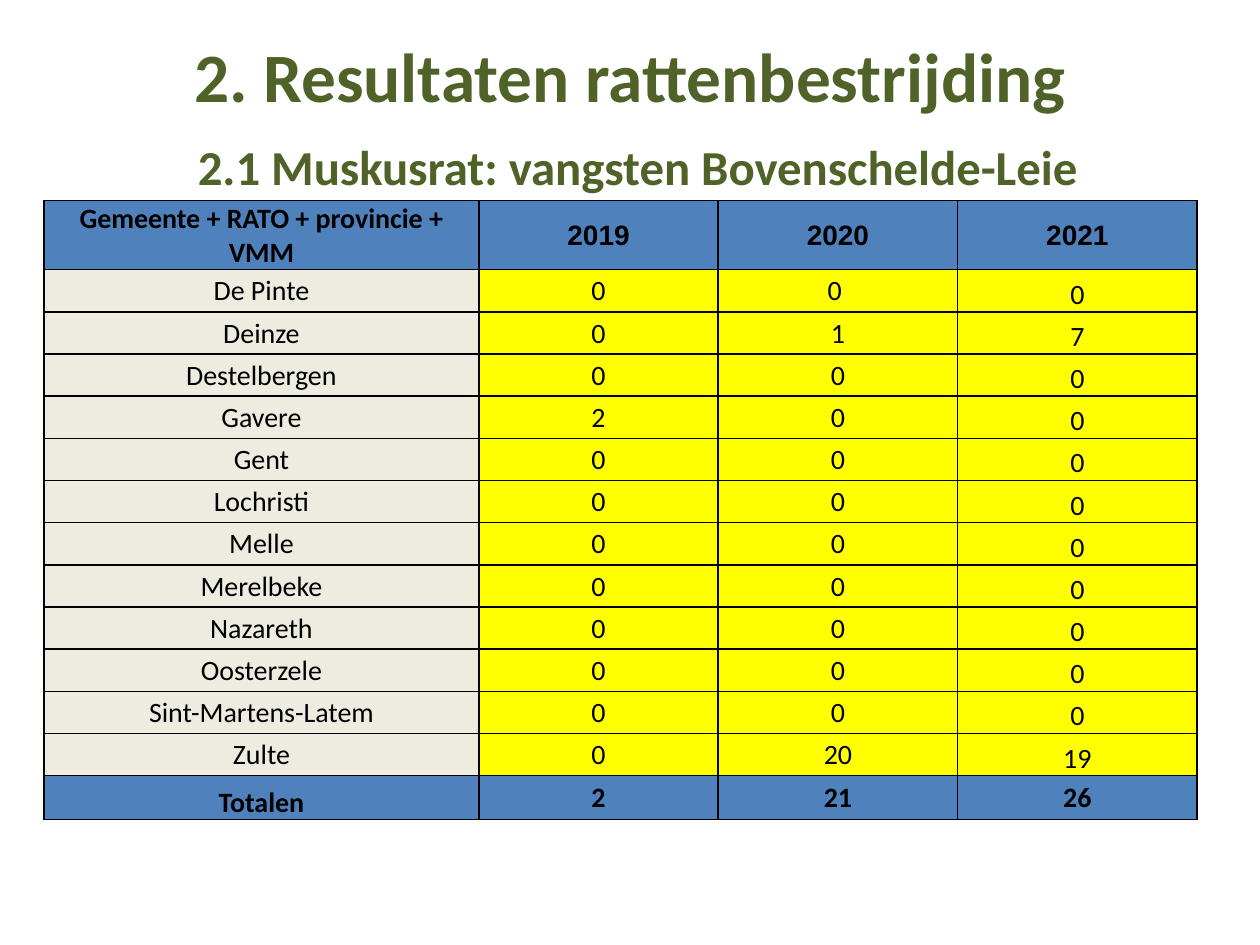
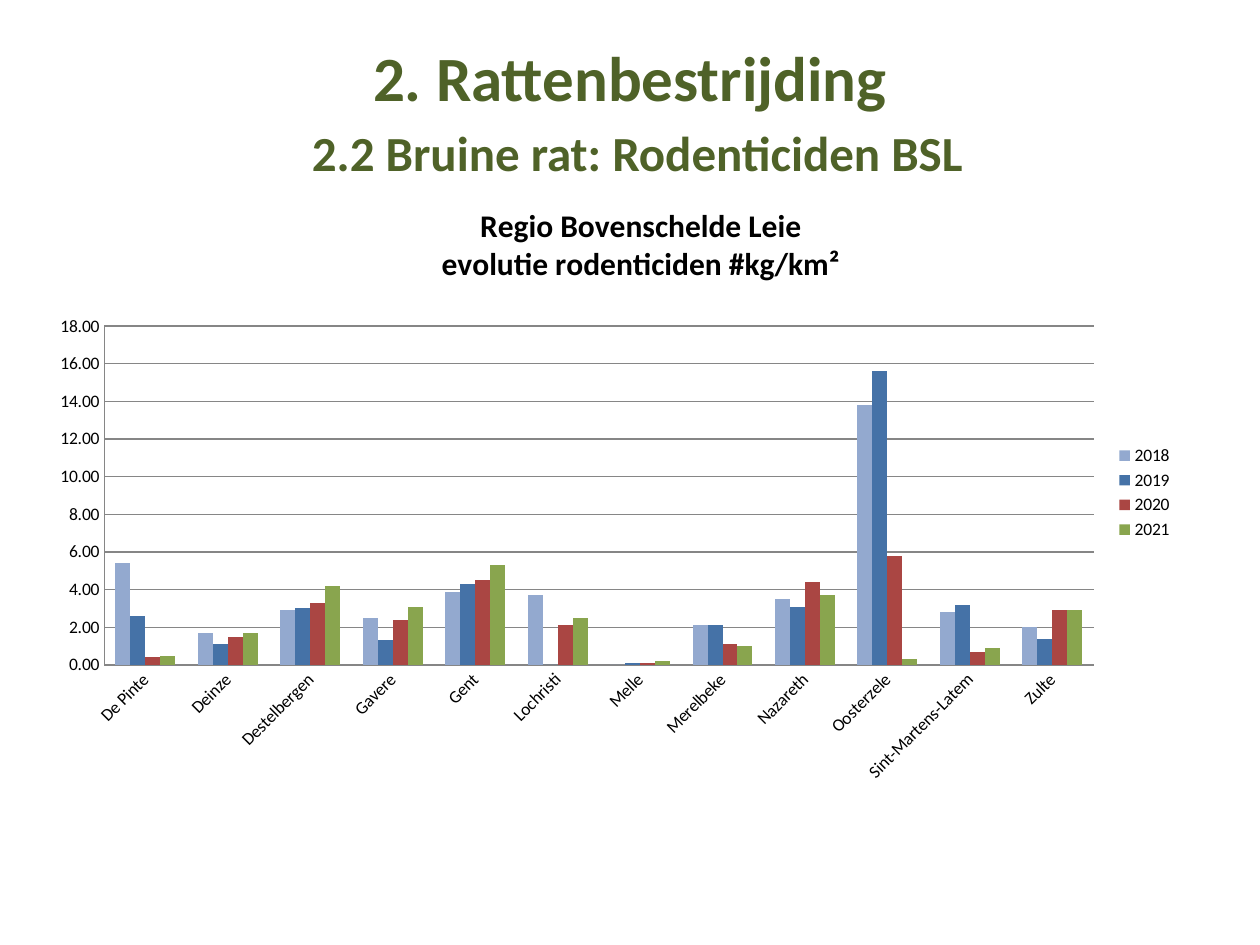
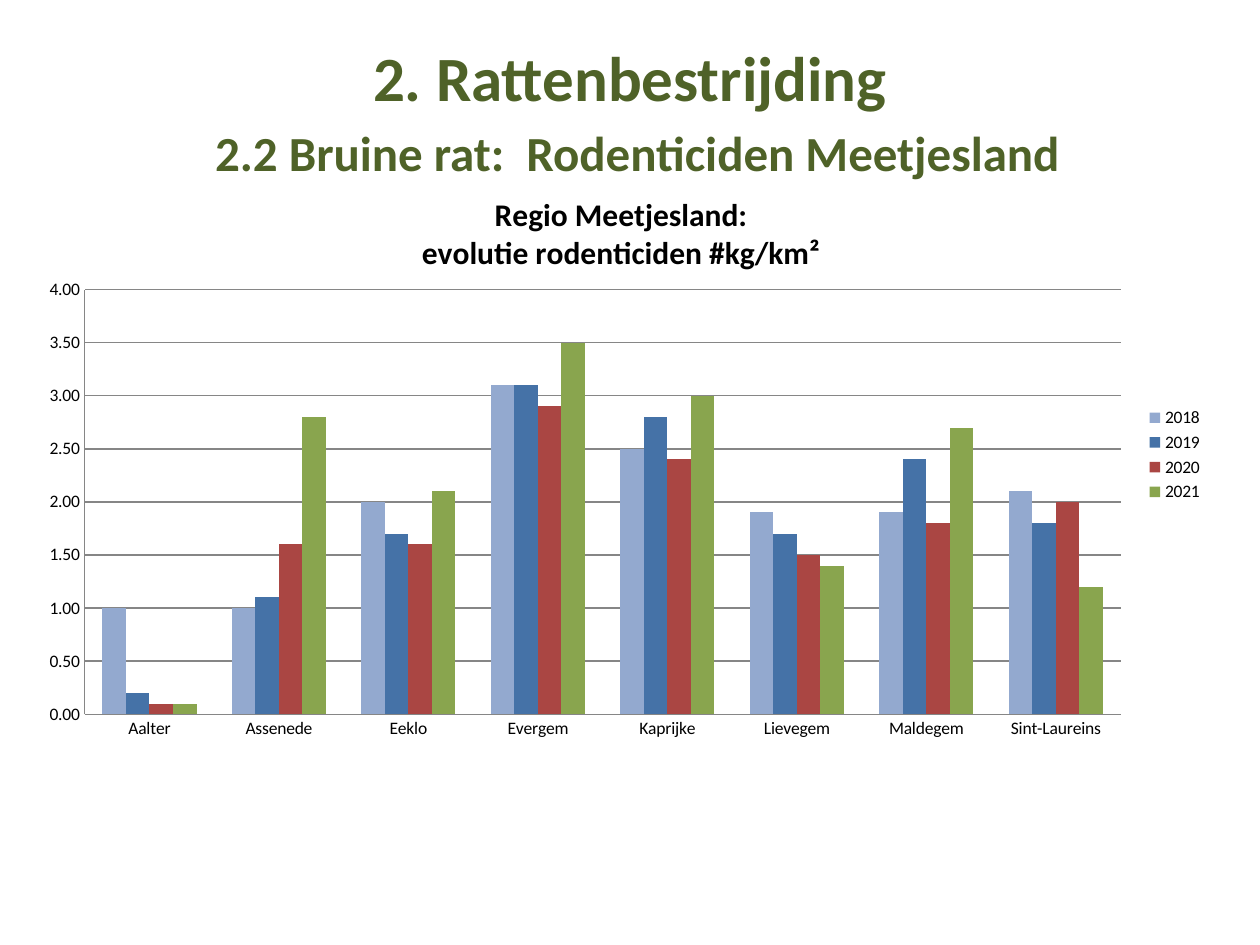
"""Build three slides on rat control: a table of catches and two column charts."""
from dataclasses import dataclass

from lxml import etree
from pptx import Presentation
from pptx import util as u
from pptx.chart.data import CategoryChartData
from pptx.dml.color import RGBColor
from pptx.enum import chart as charts
from pptx.enum import text
from pptx.oxml import parse_xml
from pptx.oxml.ns import nsdecls, qn

EMU_PER_PX = 4572


@dataclass(frozen=True)
class Theme:
    """Colours, fonts and type sizes shared by the slides."""
    font: str = "Calibri"
    year_font: str = "Arial"
    heading: str = "4F6228"
    ink: str = "000000"
    band: str = "4F81BD"
    place: str = "EEECE1"
    count: str = "FFFF00"
    grid: str = "868686"
    series: tuple[str, ...] = ("93A9CF", "4572A7", "AA4643", "89A54E")
    cell_size: float = 16
    chart_size: float = 10
    chart_title_size: float = 18


@dataclass(frozen=True)
class Box:
    """A rectangle in px."""
    left: int
    top: int
    width: int
    height: int

    def emu(self) -> tuple[u.Emu, ...]:
        """Return the rectangle in EMU."""
        return tuple(map(px, (self.left, self.top, self.width, self.height)))


@dataclass(frozen=True)
class Heading:
    """A title with a subtitle on the next line."""
    title: str
    subtitle: str
    title_size: float = 36
    gap_size: float = 37
    subtitle_size: float = 28
    line_spacing: float = 0.9


@dataclass(frozen=True)
class RegionChart:
    """Rodenticide use per municipality in one region."""
    box: Box
    title: str
    title_at: tuple[float, float]
    plot_at: tuple[float, float, float, float]
    maximum: float
    step: float
    label_angle: int
    values: dict[str, tuple[float, ...]]


THEME = Theme()
HEADING_BOX = Box(100, 60, 1800, 250)
TABLE_BOX = Box(70, 318, 1830, 984)
COLUMN_WIDTHS = (690, 380, 380, 380)
HEADER_HEIGHT, ROW_HEIGHT, TOTAL_HEIGHT = 110, 67, 70
CELL_INSET = 2
CHART_YEARS = ("2018", "2019", "2020", "2021")

CATCHES = (
    ("Gemeente + RATO + provincie + VMM", "2019", "2020", "2021"),
    ("De Pinte", "0", "0 ", "0"),
    ("Deinze", "0", "1", "7"),
    ("Destelbergen", "0", "0", "0"),
    ("Gavere", "2", "0", "0"),
    ("Gent", "0", "0", "0"),
    ("Lochristi", "0", "0", "0"),
    ("Melle", "0", "0", "0"),
    ("Merelbeke", "0", "0", "0"),
    ("Nazareth", "0", "0", "0"),
    ("Oosterzele", "0", "0", "0"),
    ("Sint-Martens-Latem", "0", "0", "0"),
    ("Zulte", "0", "20", "19"),
    ("Totalen", "2", "21", "26"),
)

CATCHES_HEADING = Heading(
    "2. Resultaten rattenbestrijding", "2.1 Muskusrat: vangsten Bovenschelde-Leie",
    39.6, 39.6, 27.9, 1.0)

CHART_SLIDES = (
    (Heading("2. Rattenbestrijding", "2.2 Bruine rat: Rodenticiden BSL"),
     RegionChart(
         Box(56, 310, 1826, 944), "Regio Bovenschelde Leie\nevolutie rodenticiden #kg/km²",
         (0.35, 0.01), (0.06, 0.22, 0.86, 0.57), 18, 2, -45,
         {"De Pinte": (5.4, 2.6, 0.4, 0.5),
          "Deinze": (1.7, 1.1, 1.5, 1.7),
          "Destelbergen": (2.9, 3, 3.3, 4.2),
          "Gavere": (2.5, 1.3, 2.4, 3.1),
          "Gent": (3.9, 4.3, 4.5, 5.3),
          "Lochristi": (3.7, 0, 2.1, 2.5),
          "Melle": (0, 0.1, 0.1, 0.2),
          "Merelbeke": (2.1, 2.1, 1.1, 1),
          "Nazareth": (3.5, 3.1, 4.4, 3.7),
          "Oosterzele": (13.8, 15.6, 5.8, 0.3),
          "Sint-Martens-Latem": (2.8, 3.2, 0.7, 0.9),
          "Zulte": (2, 1.4, 2.9, 2.9)})),
    (Heading("2. Rattenbestrijding", "2.2 Bruine rat:  Rodenticiden Meetjesland"),
     RegionChart(
         Box(40, 254, 1890, 936), "Regio Meetjesland:\nevolutie rodenticiden #kg/km²",
         (0.33, 0.05), (0.05, 0.22, 0.87, 0.72), 4, 0.5, 0,
         {"Aalter": (1, 0.2, 0.1, 0.1),
          "Assenede": (1, 1.1, 1.6, 2.8),
          "Eeklo": (2, 1.7, 1.6, 2.1),
          "Evergem": (3.1, 3.1, 2.9, 3.5),
          "Kaprijke": (2.5, 2.8, 2.4, 3),
          "Lievegem": (1.9, 1.7, 1.5, 1.4),
          "Maldegem": (1.9, 2.4, 1.8, 2.7),
          "Sint-Laureins": (2.1, 1.8, 2, 1.2)})),
)


def px(length: int) -> u.Emu:
    """Turn px into EMU."""
    return u.Emu(length * EMU_PER_PX)


def style_font(font, size: float, color: str, bold: bool = False, name: str = THEME.font) -> None:
    """Set the look of a font."""
    font.name, font.size, font.bold = name, u.Pt(size), bold
    font.color.rgb = RGBColor.from_string(color)


def add_heading(slide, heading: Heading) -> None:
    """Draw the title and subtitle as one centred paragraph."""
    text_frame = slide.shapes.add_textbox(*HEADING_BOX.emu()).text_frame
    text_frame.word_wrap = True
    text_frame.vertical_anchor = text.MSO_ANCHOR.MIDDLE
    paragraph = text_frame.paragraphs[0]
    paragraph.text = heading.title
    paragraph.alignment = text.PP_ALIGN.CENTER
    paragraph.line_spacing = heading.line_spacing
    paragraph.add_line_break()
    for words in (" ", heading.subtitle):
        paragraph.add_run().text = words
    sizes = (heading.title_size, heading.gap_size, heading.subtitle_size)
    for run, size in zip(paragraph.runs, sizes):
        style_font(run.font, size, THEME.heading, bold=True)


def add_borders(cell) -> None:
    """Draw a thin line on each side of a cell."""
    properties = cell._tc.get_or_add_tcPr()
    for index, side in enumerate(("lnL", "lnR", "lnT", "lnB")):
        properties.insert(index, parse_xml(
            f'<a:{side} {nsdecls("a")} w="12700"><a:solidFill>'
            f'<a:srgbClr val="{THEME.ink}"/></a:solidFill></a:{side}>'))


def fill_cell(cell, words: str, row: int, column: int) -> None:
    """Write and style one cell according to its place in the table."""
    last_row, last_column = len(CATCHES) - 1, len(COLUMN_WIDTHS) - 1
    is_band = row in (0, last_row)
    at_bottom = column == (0 if is_band else last_column)
    color = THEME.band if is_band else THEME.count if column else THEME.place
    cell.fill.solid()
    cell.fill.fore_color.rgb = RGBColor.from_string(color)
    cell.vertical_anchor = text.MSO_ANCHOR.BOTTOM if at_bottom else text.MSO_ANCHOR.MIDDLE
    cell.margin_left = cell.margin_right = cell.margin_top = px(CELL_INSET)
    cell.margin_bottom = 0
    cell.text_frame.text = words
    paragraph = cell.text_frame.paragraphs[0]
    paragraph.alignment = text.PP_ALIGN.CENTER
    name = THEME.year_font if row == 0 and column else THEME.font
    style_font(paragraph.runs[0].font, THEME.cell_size, THEME.ink, is_band, name)
    add_borders(cell)


def add_catches_table(slide) -> None:
    """Draw the table of catches per municipality and year."""
    table = slide.shapes.add_table(len(CATCHES), len(COLUMN_WIDTHS), *TABLE_BOX.emu()).table
    heights = (HEADER_HEIGHT, *[ROW_HEIGHT] * (len(CATCHES) - 2), TOTAL_HEIGHT)
    for column, width in zip(table.columns, COLUMN_WIDTHS):
        column.width = px(width)
    for row, height in zip(table.rows, heights):
        row.height = px(height)
    for row_index, values in enumerate(CATCHES):
        for column_index, words in enumerate(values):
            fill_cell(table.cell(row_index, column_index), words, row_index, column_index)


def set_layout(element, index: int, fractions: tuple[float, ...], inner: bool = False) -> None:
    """Place a chart part by fractions of the chart area."""
    for old in element.findall(qn("c:layout")):
        element.remove(old)
    layout = parse_xml(f'<c:layout {nsdecls("c")}><c:manualLayout/></c:layout>')
    settings = [("layoutTarget", "inner")] if inner else []
    settings += [("xMode", "edge"), ("yMode", "edge"), *zip("xywh", fractions)]
    for tag, value in settings:
        etree.SubElement(layout[0], qn(f"c:{tag}")).set("val", str(value))
    element.insert(index, layout)


def add_chart_title(chart, region: RegionChart) -> None:
    """Write the two-line title of a chart."""
    chart.has_title = True
    title = chart.chart_title
    title.text_frame.text = region.title
    for paragraph in title.text_frame.paragraphs:
        style_font(paragraph.runs[0].font, THEME.chart_title_size, THEME.ink, bold=True)
    set_layout(title.element, 1, region.title_at)


def style_axes(chart, region: RegionChart) -> None:
    """Set the scale, labels and lines of both axes."""
    grid_color = RGBColor.from_string(THEME.grid)
    value_axis, category_axis = chart.value_axis, chart.category_axis
    value_axis.minimum_scale, value_axis.maximum_scale = 0, region.maximum
    value_axis.major_unit = region.step
    value_axis.tick_labels.number_format = "0.00"
    value_axis.tick_labels.number_format_is_linked = False
    value_axis.major_gridlines.format.line.color.rgb = grid_color
    for axis in (value_axis, category_axis):
        axis.major_tick_mark = charts.XL_TICK_MARK.NONE
        axis.format.line.color.rgb = grid_color
        style_font(axis.tick_labels.font, THEME.chart_size, THEME.ink)
    body = chart.element.xpath("//c:catAx/c:txPr/a:bodyPr")[0]
    body.set("rot", str(region.label_angle * 60000))


def add_region_chart(slide, region: RegionChart) -> None:
    """Draw the clustered columns of one region."""
    data = CategoryChartData(number_format="0.00")
    data.categories = region.values.keys()
    for year, amounts in zip(CHART_YEARS, zip(*region.values.values())):
        data.add_series(year, amounts)
    chart = slide.shapes.add_chart(
        charts.XL_CHART_TYPE.COLUMN_CLUSTERED, *region.box.emu(), data).chart
    style_font(chart.font, THEME.chart_size, THEME.ink)
    add_chart_title(chart, region)
    style_axes(chart, region)
    chart.has_legend = True
    chart.legend.position = charts.XL_LEGEND_POSITION.RIGHT
    chart.legend.include_in_layout = False
    plot = chart.plots[0]
    plot.gap_width = 150
    plot.vary_by_categories = False
    for series, color in zip(plot.series, THEME.series):
        series.format.fill.solid()
        series.format.fill.fore_color.rgb = RGBColor.from_string(color)
    set_layout(chart.element.xpath("//c:plotArea")[0], 0, region.plot_at, inner=True)


def main() -> None:
    """Build and save the presentation."""
    presentation = Presentation()
    presentation.slide_width, presentation.slide_height = px(2000), px(1500)
    blank = presentation.slide_layouts[6]
    slide = presentation.slides.add_slide(blank)
    add_heading(slide, CATCHES_HEADING)
    add_catches_table(slide)
    for heading, region in CHART_SLIDES:
        slide = presentation.slides.add_slide(blank)
        add_heading(slide, heading)
        add_region_chart(slide, region)
    presentation.save("out.pptx")


if __name__ == "__main__":
    main()
